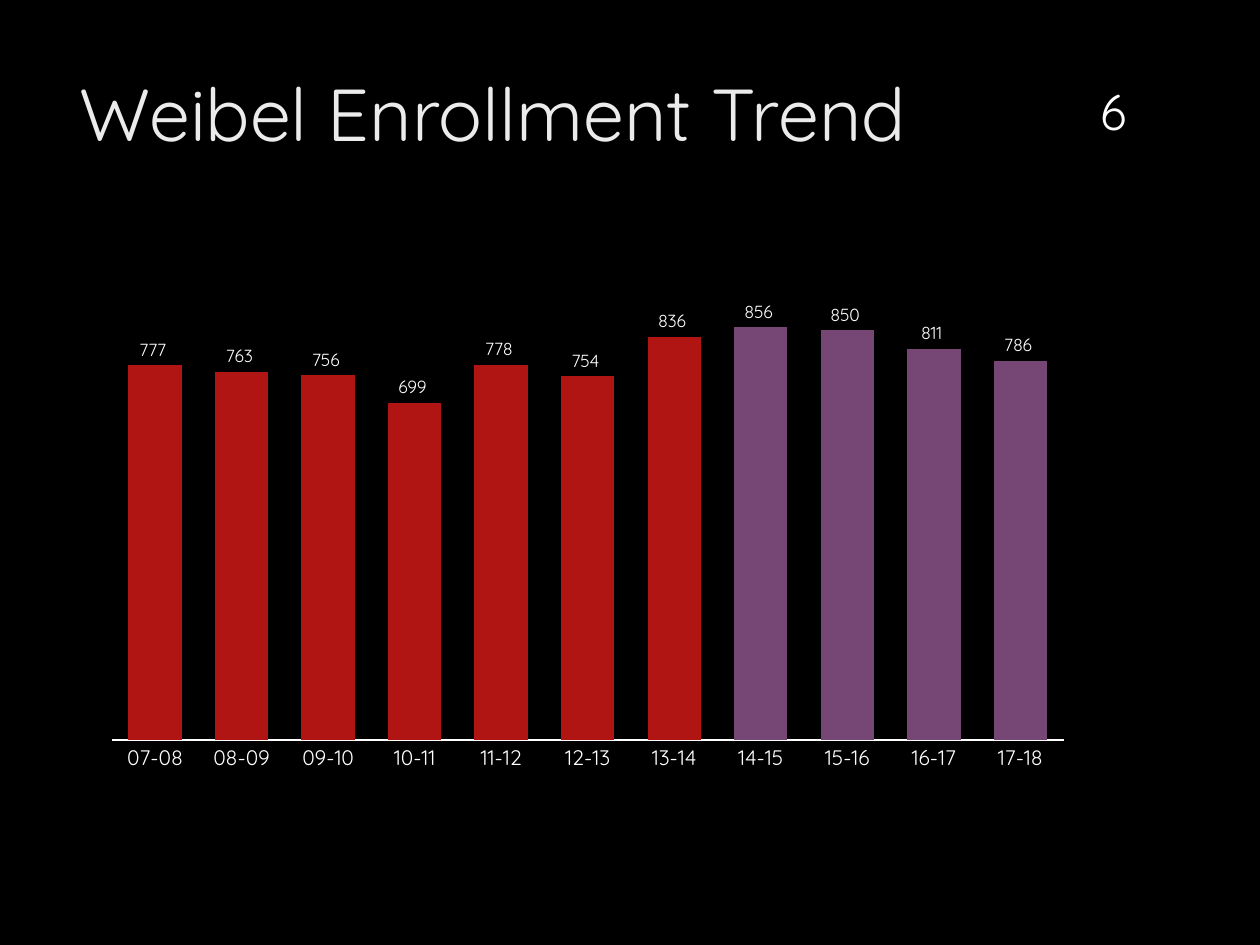
from pptx import Presentation
from pptx.chart.data import CategoryChartData as Data
from pptx.dml.color import RGBColor
from pptx.enum.chart import XL_CHART_TYPE as Kind, XL_LABEL_POSITION as Spot, XL_TICK_MARK as Tick
from pptx.enum.text import MSO_ANCHOR as Anchor, PP_ALIGN as Align
from pptx.oxml import parse_xml
from pptx.oxml.ns import nsdecls
from pptx.util import Inches, Pt

WHITE, PALE, RED, PURPLE = "FFFFFF", "EBEBEB", "B01513", "764674"
COUNT = r"#,##0_);\(#,##0\)"
YEARS = [f"{y:02}-{y + 1:02}" for y in range(7, 18)]
PUPILS = [777, 763, 756, 699, 778, 754, 836, 856, 850, 811, 786]
SHIFT = YEARS.index("14-15")  # first purple column


def paint(code):
    return RGBColor.from_string(code)


def apply(target, **values):
    for name, value in values.items():
        setattr(target, name, value)


class Deck:
    face = "Quicksand"

    def __init__(self, wide, high):
        self.show = Presentation()
        apply(self.show, slide_width=Inches(wide), slide_height=Inches(high))
        self.slide = self.show.slides.add_slide(self.show.slide_layouts[5])

    def ground(self, color):
        fill = self.slide.background.fill
        fill.solid()
        fill.fore_color.rgb = paint(color)

    def font(self, font, size, color):
        apply(font, name=self.face, size=Pt(size), bold=False)
        font.color.rgb = paint(color)

    def label(self, shape, text, size, color, align, anchor):
        frame = shape.text_frame
        apply(frame, text=text, word_wrap=True, vertical_anchor=anchor)
        para = frame.paragraphs[0]
        para.alignment = align
        self.font(para.runs[0].font, size, color)

    def title(self, text, box, size, color):
        shape = self.slide.shapes.title
        left, top, width, height = map(Inches, box)
        apply(shape, left=left, top=top, width=width, height=height)
        self.label(shape, text, size, color, Align.LEFT, Anchor.TOP)

    def text(self, text, box, size, color):
        shape = self.slide.shapes.add_textbox(*map(Inches, box))
        self.label(shape, text, size, color, Align.CENTER, Anchor.BOTTOM)

    def columns(self, cats, vals, box, color, accent, start):
        data = Data(number_format=COUNT)
        data.categories = cats
        data.add_series("Series 1", vals)
        chart = self.slide.shapes.add_chart(
            Kind.COLUMN_CLUSTERED, *map(Inches, box), data).chart
        apply(chart, has_legend=False, has_title=False)
        self.font(chart.font, 10, WHITE)

        # Axes
        base, scale = chart.category_axis, chart.value_axis
        apply(base, major_tick_mark=Tick.NONE, minor_tick_mark=Tick.NONE,
              has_major_gridlines=False)
        self.font(base.tick_labels.font, 12, WHITE)
        base.format.line.width = Pt(0.75)
        base.format.line.color.rgb = paint(WHITE)
        apply(scale, minimum_scale=0, maximum_scale=900, visible=False,
              has_major_gridlines=False)
        apply(scale.tick_labels, number_format=COUNT, number_format_is_linked=False)

        # Columns and their labels
        plot = chart.plots[0]
        apply(plot, gap_width=62, overlap=-27, vary_by_categories=False)
        series = plot.series[0]
        fills = [series.format.fill]
        fills += [series.points[i].format.fill for i in range(start, len(vals))]
        for i, fill in enumerate(fills):
            fill.solid()
            fill.fore_color.rgb = paint(accent if i else color)
        labels = series.data_labels
        apply(labels, show_value=True, position=Spot.OUTSIDE_END,
              number_format=COUNT, number_format_is_linked=False)
        self.font(labels.font, 10, WHITE)
        self.inner(chart, x=0.02, y=0.02, w=0.96, h=0.9)

    def inner(self, chart, **parts):
        """Fix the plot's inner area as shares of the chart's size."""
        area = chart.plots[0]._element.getparent()
        for old in area.findall("{*}layout"):
            area.remove(old)
        modes = "".join(f'<c:{k}Mode val="edge"/>' for k in "xy")
        sizes = "".join(f'<c:{k} val="{v}"/>' for k, v in parts.items())
        area.insert(0, parse_xml(
            f'<c:layout {nsdecls("c")}><c:manualLayout><c:layoutTarget val="inner"/>'
            f'{modes}{sizes}</c:manualLayout></c:layout>'))


def main():
    deck = Deck(10, 7.5)
    deck.ground("000000")
    deck.title("Weibel Enrollment Trend", (0.53, 0.49, 7.72, 1.53), 42, PALE)
    deck.columns(YEARS, PUPILS, (0.73, 2.35, 7.87, 3.83), RED, PURPLE, SHIFT)
    # Page number
    deck.text("6", (8.49, 0.32, 0.69, 0.84), 28, WHITE)
    deck.show.save("out.pptx")


if __name__ == "__main__":
    main()
